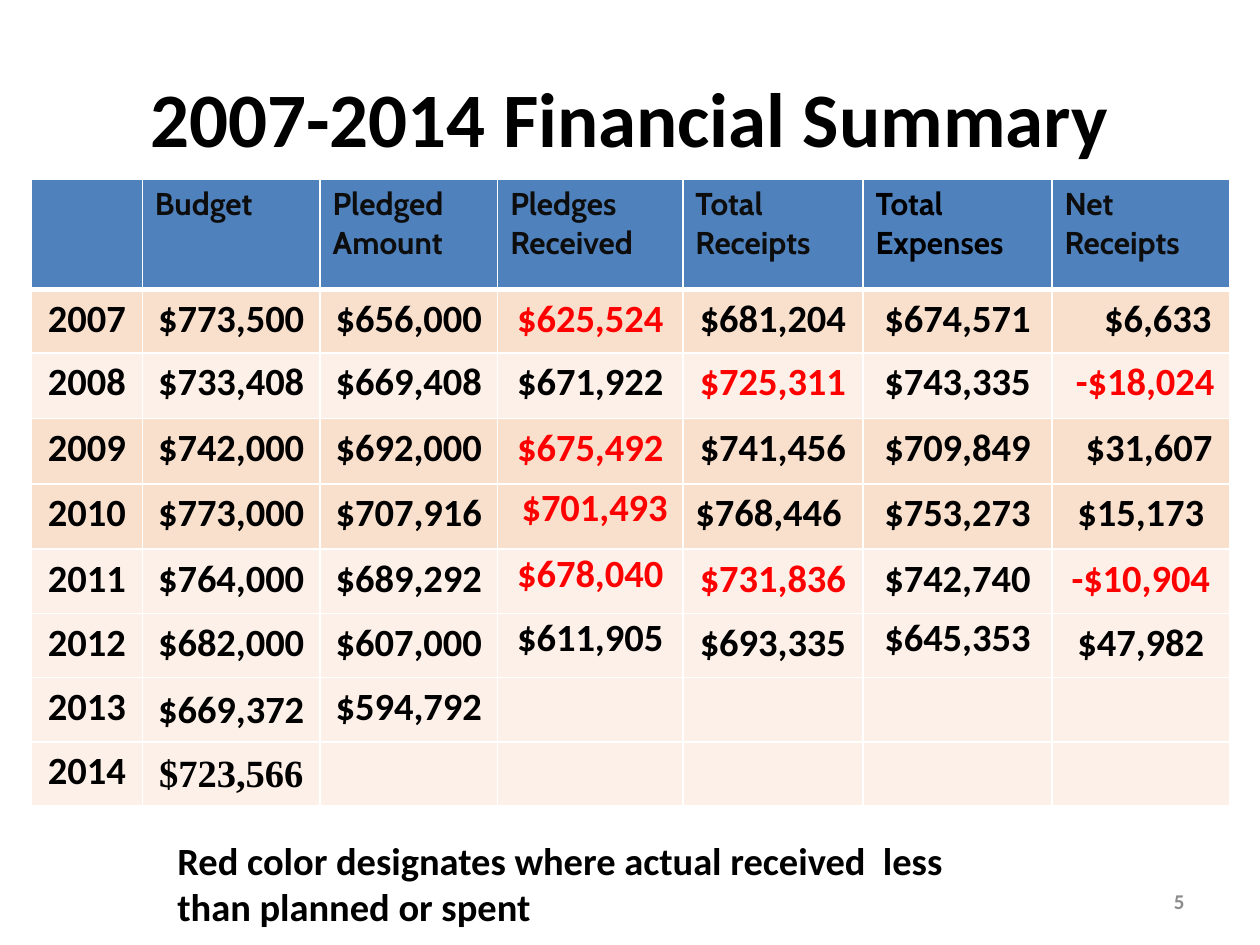
from lxml import etree
from pptx import Presentation
from pptx.dml.color import RGBColor
from pptx.enum import text
from pptx.oxml import ns
from pptx.util import Inches, Pt

BLACK = RGBColor(0x00, 0x00, 0x00)
CHARCOAL = RGBColor(0x0D, 0x0D, 0x0D)
GRAY = RGBColor(0x8C, 0x8C, 0x8C)
WHITE = RGBColor(0xFF, 0xFF, 0xFF)
RED = RGBColor(0xFF, 0x00, 0x00)
BLUE = RGBColor(0x4F, 0x81, 0xBD)
PEACH = RGBColor(0xF9, 0xE0, 0xCD)
PALE = RGBColor(0xFC, 0xF0, 0xE8)

LEFT, CENTER, RIGHT = text.PP_ALIGN.LEFT, text.PP_ALIGN.CENTER, text.PP_ALIGN.RIGHT
MIDDLE = text.MSO_ANCHOR.MIDDLE

COLUMN_WIDTHS = [0.88, 1.41, 1.41, 1.47, 1.43, 1.5, 1.41]
ROW_HEIGHTS = [0.88, 0.5] + [0.52] * 3 + [0.51] * 4
HEADERS = ["", "Budget", "Pledged Amount", "Pledges Received",
           "Total Receipts", "Total Expenses", "Net Receipts"]
YEARS = [
    ["2007", "$773,500", "$656,000", "$625,524", "$681,204", "$674,571", "$6,633"],
    ["2008", "$733,408", "$669,408", "$671,922", "$725,311", "$743,335", "-$18,024"],
    ["2009", "$742,000", "$692,000", "$675,492", "$741,456", "$709,849", "$31,607"],
    ["2010", "$773,000", "$707,916", "$701,493", "$768,446", "$753,273", "$15,173"],
    ["2011", "$764,000", "$689,292", "$678,040", "$731,836", "$742,740", "-$10,904"],
    ["2012", "$682,000", "$607,000", "$611,905", "$693,335", "$645,353", "$47,982"],
    ["2013", "$669,372", "$594,792", "", "", "", ""],
    ["2014", "$723,566", "", "", "", "", ""],
]
SHORTFALLS = {"$625,524", "$725,311", "-$18,024", "$675,492", "$701,493",
              "$678,040", "$731,836", "-$10,904"}
PEACH_YEARS = {"2007", "2009", "2010"}
TIGHT = (0.01, 0.01, 0.01, 0)
FLUSH = (0, 0, 0, 0)
CELL_MARGINS = {
    "$6,633": (0.37, 0.05, 0.1, 0.05),
    "-$18,024": (0.17, 0.05, 0.1, 0.05),
    "$31,607": (0.23, 0.05, 0.1, 0.05),
    "$768,446": (0.05, 0.05, 0.12, 0.05),
    "$701,493": (0.08, 0.01, 0.01, 0),
    "$678,040": TIGHT,
    "$611,905": TIGHT,
    "$645,353": TIGHT,
    "$669,372": FLUSH,
    "$723,566": FLUSH,
}


def write(frame, words, size, color, align=LEFT, font="Calibri", bold=True):
    para = frame.paragraphs[0]
    para.alignment = align
    span = para.add_run()
    span.text = words
    span.font.name = font
    span.font.size = Pt(size)
    span.font.bold = bold
    span.font.color.rgb = color


def add_title(page, words):
    title = page.shapes.title
    title.left, title.top = Inches(0.5), Inches(0.3)
    title.width, title.height = Inches(9), Inches(1.25)
    title.text_frame.vertical_anchor = MIDDLE
    write(title.text_frame, words, 44, BLACK, CENTER)


def add_text(page, place, words, size, color, align=LEFT, anchor=None):
    box = page.shapes.add_textbox(*map(Inches, place))
    box.text_frame.word_wrap = True
    box.text_frame.vertical_anchor = anchor
    write(box.text_frame, words, size, color, align)


def add_borders(cell, top, bottom):
    properties = cell._tc.get_or_add_tcPr()
    for side, points in (("L", 1), ("R", 1), ("T", top), ("B", bottom)):
        line = etree.SubElement(properties, ns.qn(f"a:ln{side}"), w=str(Pt(points)))
        fill = etree.SubElement(line, ns.qn("a:solidFill"))
        etree.SubElement(fill, ns.qn("a:srgbClr"), val=str(WHITE))


def style_cell(cell, fill, top=1, bottom=1):
    add_borders(cell, top, bottom)
    cell.fill.solid()
    cell.fill.fore_color.rgb = fill


def fill_header(cell, words):
    style_cell(cell, BLUE, bottom=3)
    if words:
        color = BLACK if words == "Total Expenses" else CHARCOAL
        write(cell.text_frame, words, 18, color, font="Cabin")


def fill_amount(cell, words, fill, top):
    style_cell(cell, fill, top=top)
    if not words:
        return
    if words in CELL_MARGINS:
        margins = map(Inches, CELL_MARGINS[words])
        cell.margin_left, cell.margin_top, cell.margin_right, cell.margin_bottom = margins
        if CELL_MARGINS[words] == FLUSH:
            cell.vertical_anchor = MIDDLE
    color = RED if words in SHORTFALLS else BLACK
    font = "Times New Roman" if words == "$723,566" else "Calibri"
    write(cell.text_frame, words, 22, color, CENTER, font)


def add_summary_table(page):
    frame = page.shapes.add_table(len(ROW_HEIGHTS), len(COLUMN_WIDTHS), Inches(0.25),
                                  Inches(1.42), Inches(9.5), Inches(4.97))
    table = frame.table
    table.horz_banding = False
    for column, width in zip(table.columns, COLUMN_WIDTHS):
        column.width = Inches(width)
    for row, height in zip(table.rows, ROW_HEIGHTS):
        row.height = Inches(height)
    for column, words in enumerate(HEADERS):
        fill_header(table.cell(0, column), words)
    for row, amounts in enumerate(YEARS, start=1):
        fill = PEACH if amounts[0] in PEACH_YEARS else PALE
        for column, words in enumerate(amounts):
            fill_amount(table.cell(row, column), words, fill, 3 if row == 1 else 1)


def main():
    deck = Presentation()
    deck.slide_width, deck.slide_height = Inches(10), Inches(7.5)
    page = deck.slides.add_slide(deck.slide_layouts[5])
    add_title(page, "2007-2014 Financial Summary")
    add_summary_table(page)
    add_text(page, (7.17, 6.95, 2.33, 0.4), "5", 12, GRAY, RIGHT, MIDDLE)
    add_text(page, (1.31, 6.59, 6.42, 0.84),
             "Red color designates where actual received  less than planned or spent",
             22, BLACK)
    deck.save("out.pptx")


if __name__ == "__main__":
    main()
